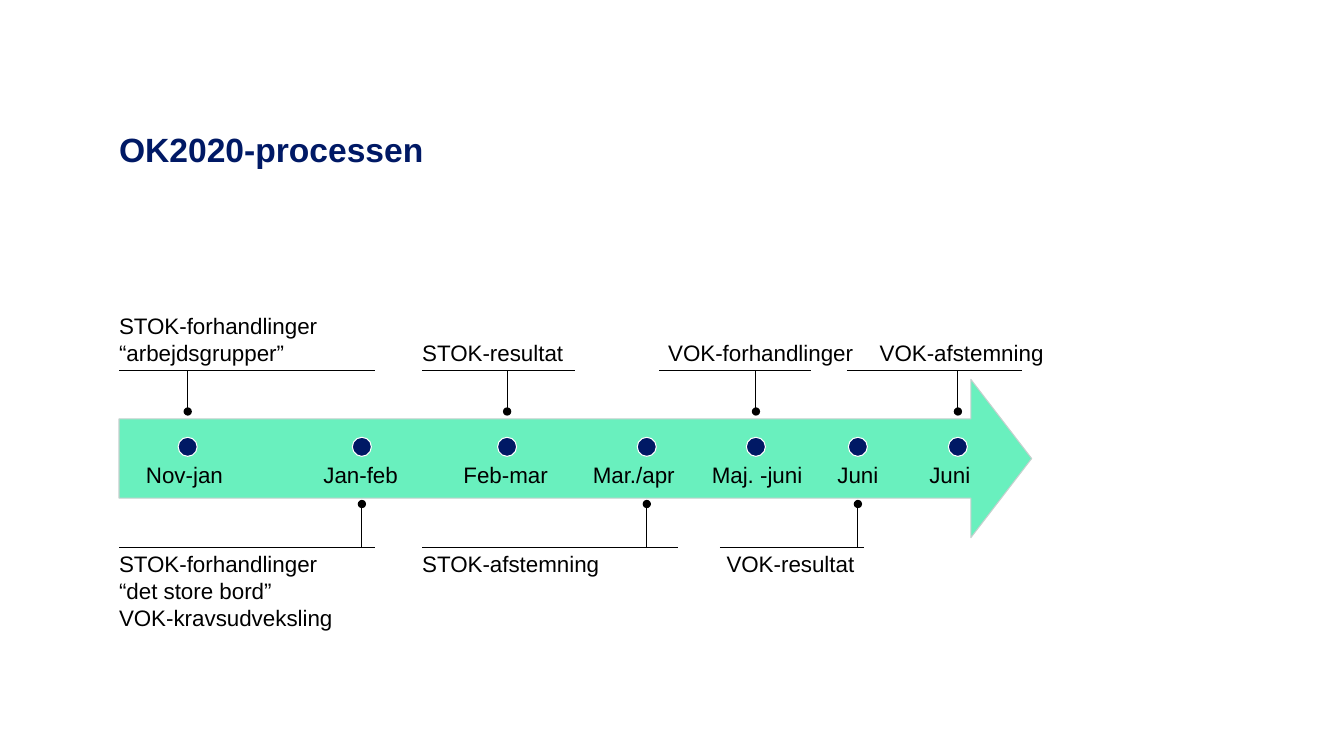
from dataclasses import dataclass

from lxml.etree import SubElement
from pptx import Presentation
from pptx.dml.color import RGBColor
from pptx.enum.shapes import MSO_CONNECTOR, MSO_SHAPE
from pptx.enum.text import MSO_ANCHOR, MSO_AUTO_SIZE, PP_ALIGN
from pptx.oxml.ns import qn
from pptx.util import Cm, Pt


@dataclass(frozen=True)
class Theme:
    font: str = "Arial"
    navy: RGBColor = RGBColor(0x00, 0x19, 0x65)
    mint: RGBColor = RGBColor(0x69, 0xF0, 0xBE)
    gray: RGBColor = RGBColor(0xC5, 0xD0, 0xCE)
    black: RGBColor = RGBColor(0, 0, 0)
    white: RGBColor = RGBColor(255, 255, 255)
    title_size: Pt = Pt(24)
    text_size: Pt = Pt(16)
    line_width: Pt = Pt(0.75)


@dataclass(frozen=True)
class Box:
    """A region in centimetres."""
    left: float
    top: float
    width: float
    height: float

    def inner(self, left, top, width, height):
        return Box(self.left + left, self.top + top, width, height)

    def lengths(self):
        return Cm(self.left), Cm(self.top), Cm(self.width), Cm(self.height)


@dataclass(frozen=True)
class Milestone:
    """Horizontal places are measured from the left edge of the timeline."""
    center: float
    month: str
    month_left: float
    month_width: float
    label: str
    label_left: float
    rule_left: float
    rule_right: float
    above: bool
    month_align: PP_ALIGN = PP_ALIGN.LEFT


THEME = Theme()
TITLE_BOX = Box(3, 3, 20.52, 1.6)
TIMELINE_BOX = Box(3, 7.85, 23, 8.08)
LABEL_WIDTH = 6.45
LINE_HEIGHT = 0.68
DOT_SIZE = 0.48
MILESTONES = [
    Milestone(1.73, "Nov-jan", 0.68, 2.13, "STOK-forhandlinger\n“arbejdsgrupper”",
              0, 0, 6.45, True),
    Milestone(6.12, "Jan-feb", 5.15, 1.91,
              "STOK-forhandlinger\n“det store bord”\nVOK-kravsudveksling", 0, 0, 6.45, False),
    Milestone(9.78, "Feb-mar", 8.68, 2.18, "STOK-resultat", 7.64, 7.64, 11.5, True),
    Milestone(13.3, "Mar./apr", 11.94, 2.77, "STOK-afstemning", 7.64, 7.64, 14.09, False),
    Milestone(16.05, "Maj. -juni", 14.81, 2.54, "VOK-forhandlinger",
              13.84, 13.61, 17.45, True, PP_ALIGN.CENTER),
    Milestone(18.62, "Juni", 17.45, 2.34, "VOK-resultat",
              15.31, 15.14, 18.77, False, PP_ALIGN.CENTER),
    Milestone(21.14, "Juni", 20.42, 1.47, "VOK-afstemning", 19.17, 18.34, 22.76, True),
]


def clear_margins(frame, anchor):
    frame.margin_left = frame.margin_right = frame.margin_top = frame.margin_bottom = 0
    frame.vertical_anchor = anchor
    frame.word_wrap = True


def style_runs(para, size, color, bold=False):
    for span in para.runs:
        span.font.name = THEME.font
        span.font.size = size
        span.font.bold = bold
        span.font.color.rgb = color


def add_title(page, box, text):
    title = page.shapes.title
    title.left, title.top, title.width, title.height = box.lengths()
    clear_margins(title.text_frame, MSO_ANCHOR.MIDDLE)
    para = title.text_frame.paragraphs[0]
    para.text = text
    para.alignment = PP_ALIGN.LEFT
    para.line_spacing = Pt(27)
    style_runs(para, THEME.title_size, THEME.navy, bold=True)


def add_text(page, box, text, anchor=MSO_ANCHOR.TOP, align=PP_ALIGN.LEFT):
    frame = page.shapes.add_textbox(*box.lengths()).text_frame
    clear_margins(frame, anchor)
    frame.auto_size = MSO_AUTO_SIZE.SHAPE_TO_FIT_TEXT
    para = frame.paragraphs[0]
    para.text = text
    para.alignment = align
    style_runs(para, THEME.text_size, THEME.black)


def add_filled_shape(page, kind, box, fill, outline):
    shape = page.shapes.add_shape(kind, *box.lengths())
    shape.shadow.inherit = False
    shape.fill.solid()
    shape.fill.fore_color.rgb = fill
    shape.line.color.rgb = outline
    shape.line.width = THEME.line_width
    return shape


def add_line(page, start, end, dotted_start=False):
    line = page.shapes.add_connector(
        MSO_CONNECTOR.STRAIGHT, *(Cm(length) for length in (*start, *end)))
    line.line.color.rgb = THEME.black
    line.line.width = THEME.line_width
    properties = line._element.spPr
    if dotted_start:
        SubElement(properties.find(qn("a:ln")), qn("a:headEnd"), type="oval")
    SubElement(properties, qn("a:effectLst"))


def add_callout(page, box, milestone):
    """Draws the label, its rule and the stem that points at the arrow."""
    height = LINE_HEIGHT * len(milestone.label.splitlines())
    if milestone.above:
        rule, stem, label_top, anchor = 1.48, 2.52, 1.37 - height, MSO_ANCHOR.BOTTOM
    else:
        rule, stem, label_top, anchor = 5.94, 4.85, 6.02, MSO_ANCHOR.TOP
    label_box = box.inner(milestone.label_left, label_top, LABEL_WIDTH, height)
    add_text(page, label_box, milestone.label, anchor)
    rule_y = box.top + rule
    center = box.left + milestone.center
    add_line(page, (box.left + milestone.rule_left, rule_y),
             (box.left + milestone.rule_right, rule_y))
    add_line(page, (center, box.top + stem), (center, rule_y), dotted_start=True)


def add_timeline(page, box, milestones):
    arrow = add_filled_shape(page, MSO_SHAPE.RIGHT_ARROW,
                             box.inner(0, 1.71, box.width, 3.99), THEME.mint, THEME.gray)
    arrow.adjustments[0], arrow.adjustments[1] = 0.5, 0.384
    for milestone in milestones:
        dot_box = box.inner(milestone.center - DOT_SIZE / 2, 3.17, DOT_SIZE, DOT_SIZE)
        add_filled_shape(page, MSO_SHAPE.OVAL, dot_box, THEME.navy, THEME.white)
        month_box = box.inner(milestone.month_left, 3.76, milestone.month_width, LINE_HEIGHT)
        add_text(page, month_box, milestone.month, align=milestone.month_align)
        add_callout(page, box, milestone)


def main():
    deck = Presentation()
    deck.slide_width, deck.slide_height = Cm(33.87), Cm(19.05)
    page = deck.slides.add_slide(deck.slide_layouts.get_by_name("Title Only"))
    add_title(page, TITLE_BOX, "OK2020-processen")
    add_timeline(page, TIMELINE_BOX, MILESTONES)
    deck.save("out.pptx")


if __name__ == "__main__":
    main()
